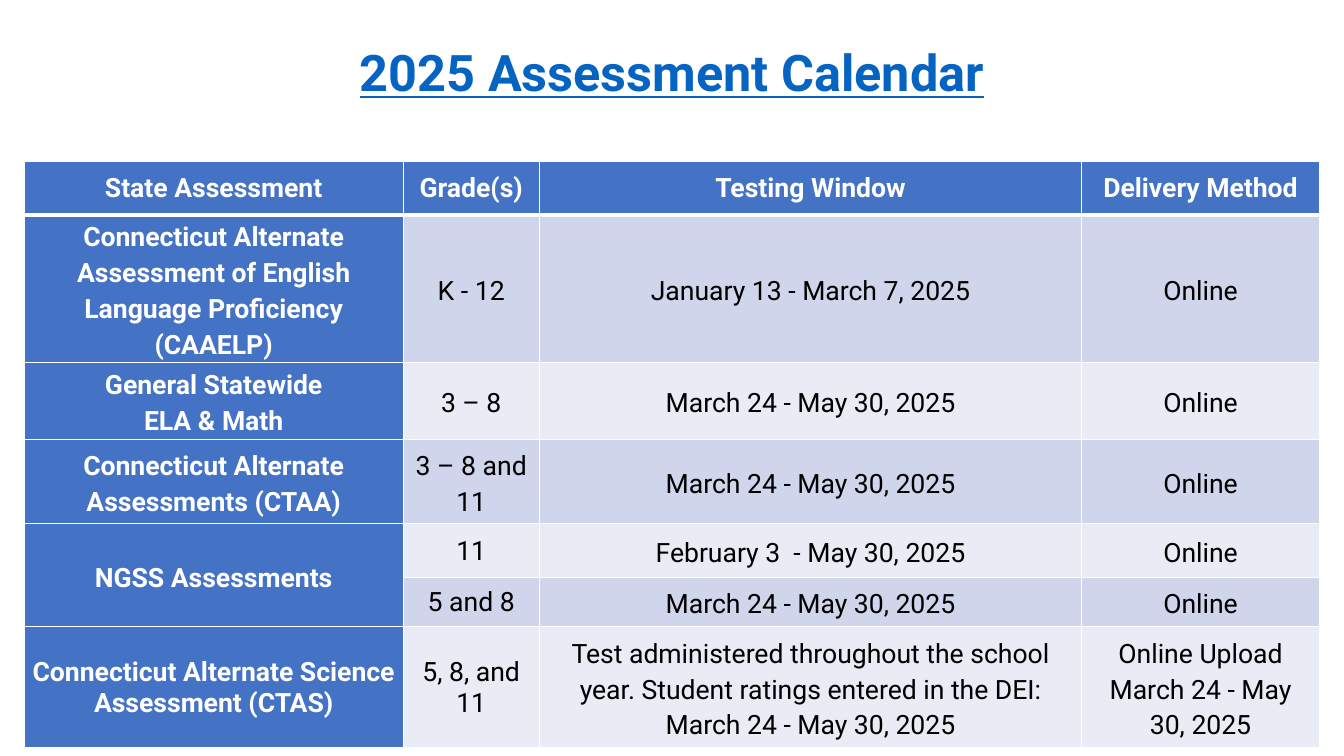
from dataclasses import dataclass

from lxml.etree import SubElement
from pptx import Presentation
from pptx.dml.color import RGBColor
from pptx.enum.text import MSO_ANCHOR as Anchor, PP_ALIGN as Align
from pptx.oxml.ns import qn
from pptx.util import Cm, Pt

FONT = "Roboto"
WHITE, BLACK, LINK_BLUE = "FFFFFF", "000000", "0563C1"
HEADING_FILL = "4472C4"
BAND_FILLS = ("E9EBF5", "CFD5EA")
COLUMN_WIDTHS = (9.55, 3.43, 13.67, 5.99)
HEADINGS = ("State Assessment", "Grade(s)", "Testing Window", "Delivery Method")
SPRING_WINDOW = "March 24 - May 30, 2025"
CELL_FORMAT = {
    "vertical_anchor": Anchor.MIDDLE,
    "margin_left": Cm(0.2),
    "margin_right": Cm(0.2),
    "margin_top": Cm(0.03),
    "margin_bottom": 0,
}


@dataclass
class Assessment:
    height: float
    name: str
    grades: str
    window: str = SPRING_WINDOW
    delivery: str = "Online"
    name_spacing: float = 1.15
    grades_spacing: float = 1.15


ASSESSMENTS = [
    Assessment(
        3.66,
        "Connecticut Alternate Assessment of English Language Proficiency (CAAELP)",
        "K - 12",
        "January 13 - March 7, 2025",
    ),
    Assessment(1.93, "General Statewide\nELA & Math", "3 – 8"),
    Assessment(2.13, "Connecticut Alternate Assessments (CTAA)", "3 – 8 and 11"),
    Assessment(1.35, "NGSS Assessments", "11", "February 3  - May 30, 2025", grades_spacing=1.0),
    Assessment(1.24, "", "5 and 8", grades_spacing=1.0),
    Assessment(
        3.05,
        "Connecticut Alternate Science Assessment (CTAS)",
        "5, 8, and 11",
        f"Test administered throughout the school year. Student ratings entered in the DEI: {SPRING_WINDOW}",
        f"Online Upload\n{SPRING_WINDOW}",
        name_spacing=1.0,
        grades_spacing=1.0,
    ),
]


def color(value: str) -> RGBColor:
    return RGBColor.from_string(value)


def apply(target, values: dict) -> None:
    for attribute, value in values.items():
        setattr(target, attribute, value)


def write(frame, text: str, ink: str, spacing: float, font_format: dict) -> None:
    frame.text = text
    for paragraph in frame.paragraphs:
        apply(paragraph, {"alignment": Align.CENTER, "line_spacing": spacing})
        for run in paragraph.runs:
            apply(run.font, {"name": FONT, **font_format})
            run.font.color.rgb = color(ink)


def add_borders(cell, top: float, bottom: float) -> None:
    properties = cell._tc.get_or_add_tcPr()
    widths = {"L": 1, "R": 1, "T": top, "B": bottom}
    for position, (side, width) in enumerate(widths.items()):
        line = SubElement(properties, qn(f"a:ln{side}"), w=str(Pt(width)))
        fill = SubElement(line, qn("a:solidFill"))
        SubElement(fill, qn("a:srgbClr"), val=WHITE)
        properties.insert(position, line)


def fill_cell(table, row: int, column: int, text: str, spacing: float) -> None:
    cell = table.cell(row, column)
    heading = row == 0 or column == 0
    apply(cell, CELL_FORMAT)
    cell.fill.solid()
    cell.fill.fore_color.rgb = color(HEADING_FILL if heading else BAND_FILLS[row % 2])
    add_borders(cell, top=3 if row == 1 else 1, bottom=3 if row == 0 else 1)
    write(cell.text_frame, text, WHITE if heading else BLACK, spacing,
          {"size": Pt(19), "bold": heading})


def add_title(slide) -> None:
    frame = slide.shapes.add_textbox(Cm(6.78), 0, Cm(20.32), Cm(3.81)).text_frame
    apply(frame, {"word_wrap": True, "vertical_anchor": Anchor.MIDDLE})
    write(frame, "2025 Assessment Calendar", LINK_BLUE, 0.9,
          {"size": Pt(36), "bold": True, "underline": True})


def add_calendar(slide) -> None:
    heights = [1.35] + [assessment.height for assessment in ASSESSMENTS]
    table = slide.shapes.add_table(
        len(heights), len(COLUMN_WIDTHS), Cm(0.61), Cm(4.06),
        Cm(sum(COLUMN_WIDTHS)), Cm(sum(heights)),
    ).table
    for column, width in zip(table.columns, COLUMN_WIDTHS):
        column.width = Cm(width)
    for row, height in zip(table.rows, heights):
        row.height = Cm(height)
    for column, heading in enumerate(HEADINGS):
        fill_cell(table, 0, column, heading, 1.0)
    for row, item in enumerate(ASSESSMENTS, start=1):
        texts = (
            (item.name, item.name_spacing),
            (item.grades, item.grades_spacing),
            (item.window, 1.15),
            (item.delivery, 1.15),
        )
        for column, (text, spacing) in enumerate(texts):
            fill_cell(table, row, column, text, spacing)
        if not item.name:
            table.cell(row - 1, 0).merge(table.cell(row, 0))


def main() -> None:
    presentation = Presentation()
    apply(presentation, {"slide_width": Cm(33.87), "slide_height": Cm(19.05)})
    slide = presentation.slides.add_slide(presentation.slide_layouts[6])
    add_title(slide)
    add_calendar(slide)
    presentation.save("out.pptx")


if __name__ == "__main__":
    main()
